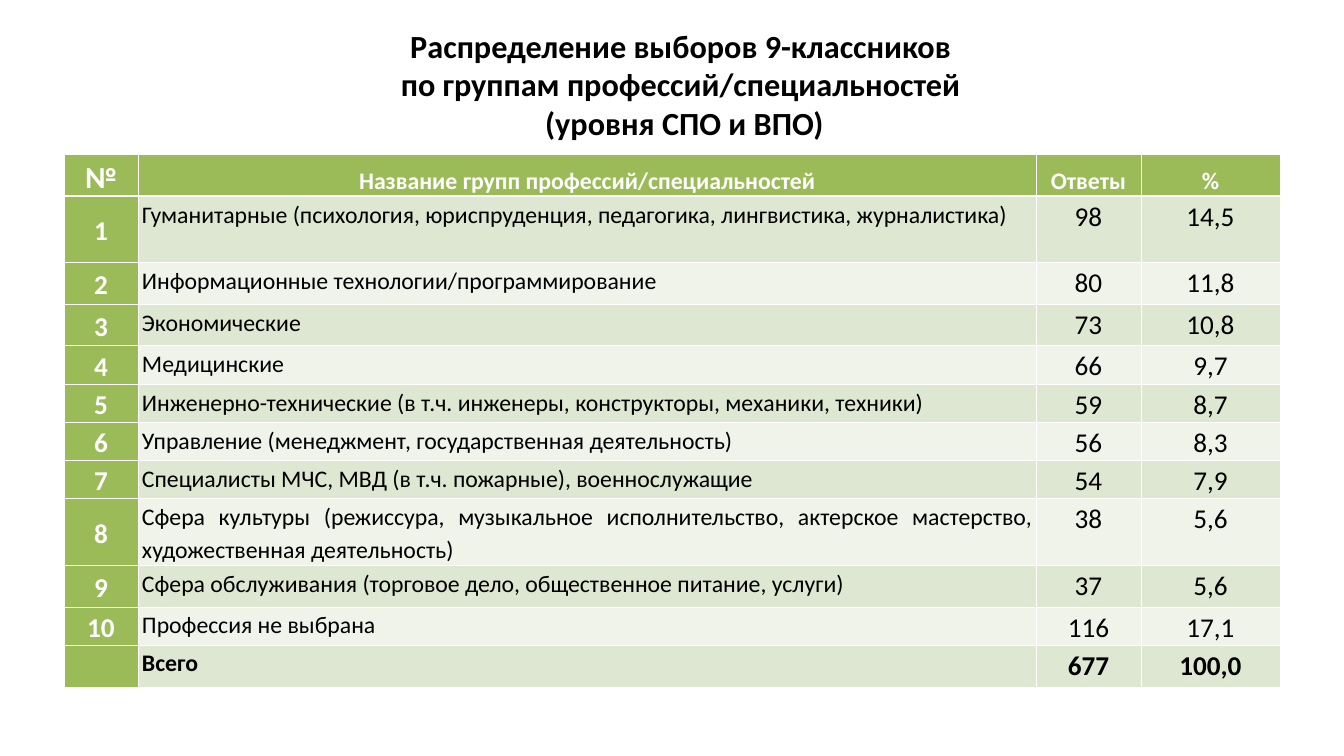
from lxml import etree
from pptx import Presentation
from pptx.dml.color import RGBColor
from pptx.enum import text
from pptx.oxml import ns
from pptx.util import Pt

PX = 914400 / 61.1
FONT = "Calibri"
WHITE = RGBColor(0xFF, 0xFF, 0xFF)
BLACK = RGBColor(0, 0, 0)
GREEN = RGBColor(0x9B, 0xBB, 0x59)
BANDS = (RGBColor(0xEF, 0xF3, 0xEA), RGBColor(0xDE, 0xE7, 0xD1))
CENTER, JUSTIFY, LEFT = text.PP_ALIGN.CENTER, text.PP_ALIGN.JUSTIFY, text.PP_ALIGN.LEFT
TOP, MIDDLE, BOTTOM = text.MSO_ANCHOR.TOP, text.MSO_ANCHOR.MIDDLE, text.MSO_ANCHOR.BOTTOM

# Content
HEADING = ("Распределение выборов 9-классников \v"
           "по группам профессий/специальностей \v"
           "(уровня СПО и ВПО)")
HEADING_BOX = (86, 26, 1197, 117)
TABLE_ORIGIN = (64, 154)
COLUMN_WIDTHS = (74, 898, 105, 139)
# Each row: height in px, then the four cells
ROWS = [
    (42, "№", "Название групп профессий/специальностей", "Ответы", "%"),
    (66, "1", "Гуманитарные (психология, юриспруденция, педагогика, лингвистика, журналистика)", "98", "14,5"),
    (42, "2", "Информационные технологии/программирование", "80", "11,8"),
    (41, "3", "Экономические", "73", "10,8"),
    (39, "4", "Медицинские", "66", "9,7"),
    (38, "5", "Инженерно-технические (в т.ч. инженеры, конструкторы, механики, техники)", "59", "8,7"),
    (38, "6", "Управление (менеджмент, государственная деятельность)", "56", "8,3"),
    (38, "7", "Специалисты МЧС, МВД (в т.ч. пожарные), военнослужащие", "54", "7,9"),
    (67, "8", "Сфера культуры (режиссура, музыкальное исполнительство, актерское мастерство, "
              "художественная деятельность)", "38", "5,6"),
    (42, "9", "Сфера обслуживания (торговое дело, общественное питание, услуги)", "37", "5,6"),
    (38, "10", "Профессия не выбрана", "116", "17,1"),
    (42, "", "Всего", "677", "100,0"),
]
TOTAL = len(ROWS) - 1


def px(length):
    return round(length * PX)


def write(paragraph, words, size, color, bold, align):
    paragraph.text = words
    paragraph.alignment = align
    font = paragraph.font
    font.name, font.size, font.bold = FONT, Pt(size), bold
    font.color.rgb = color


def add_borders(cell, row):
    widths = {"L": 1, "R": 1, "T": 3 if row == 1 else 1, "B": 3 if row == 0 else 1}
    properties = cell._tc.get_or_add_tcPr()
    for place, (side, width) in enumerate(widths.items()):
        line = etree.Element(ns.qn(f"a:ln{side}"), w=str(Pt(width)))
        fill = etree.SubElement(line, ns.qn("a:solidFill"))
        etree.SubElement(fill, ns.qn("a:srgbClr"), val=str(WHITE))
        properties.insert(place, line)


def cell_style(row, column):
    """Return size, bold, alignment and anchor for a cell."""
    if column == 0:
        return (32 if row else 36), True, CENTER, MIDDLE
    if row == 0:
        return 28, True, CENTER, BOTTOM
    if column == 1:
        return 28, row == TOTAL, LEFT if row == TOTAL else JUSTIFY, TOP
    return 32, row == TOTAL, CENTER, TOP


def add_heading(slide):
    frame = slide.shapes.add_textbox(*map(px, HEADING_BOX)).text_frame
    frame.word_wrap = True
    frame.margin_left = frame.margin_right = frame.margin_top = frame.margin_bottom = 0
    write(frame.paragraphs[0], HEADING, 38, BLACK, True, CENTER)


def add_answers(slide):
    size = (sum(COLUMN_WIDTHS), sum(row[0] for row in ROWS))
    answers = slide.shapes.add_table(len(ROWS), len(COLUMN_WIDTHS),
                                     *map(px, TABLE_ORIGIN + size)).table
    for column, width in zip(answers.columns, COLUMN_WIDTHS):
        column.width = px(width)
    for r, (height, *entries) in enumerate(ROWS):
        answers.rows[r].height = px(height)
        for c, words in enumerate(entries):
            cell = answers.cell(r, c)
            on_green = r == 0 or c == 0
            points, bold, align, anchor = cell_style(r, c)
            cell.margin_left = cell.margin_right = px(4)
            cell.margin_top = cell.margin_bottom = 0
            cell.vertical_anchor = anchor
            cell.fill.solid()
            cell.fill.fore_color.rgb = GREEN if on_green else BANDS[r % 2]
            add_borders(cell, r)
            paragraph = cell.text_frame.paragraphs[0]
            write(paragraph, words, points, WHITE if on_green else BLACK, bold, align)
            paragraph.line_spacing = 1.15


def main():
    deck = Presentation()
    deck.slide_width, deck.slide_height = px(1344), px(756)
    slide = deck.slides.add_slide(deck.slide_layouts[6])
    add_heading(slide)
    add_answers(slide)
    deck.save("out.pptx")


if __name__ == "__main__":
    main()
